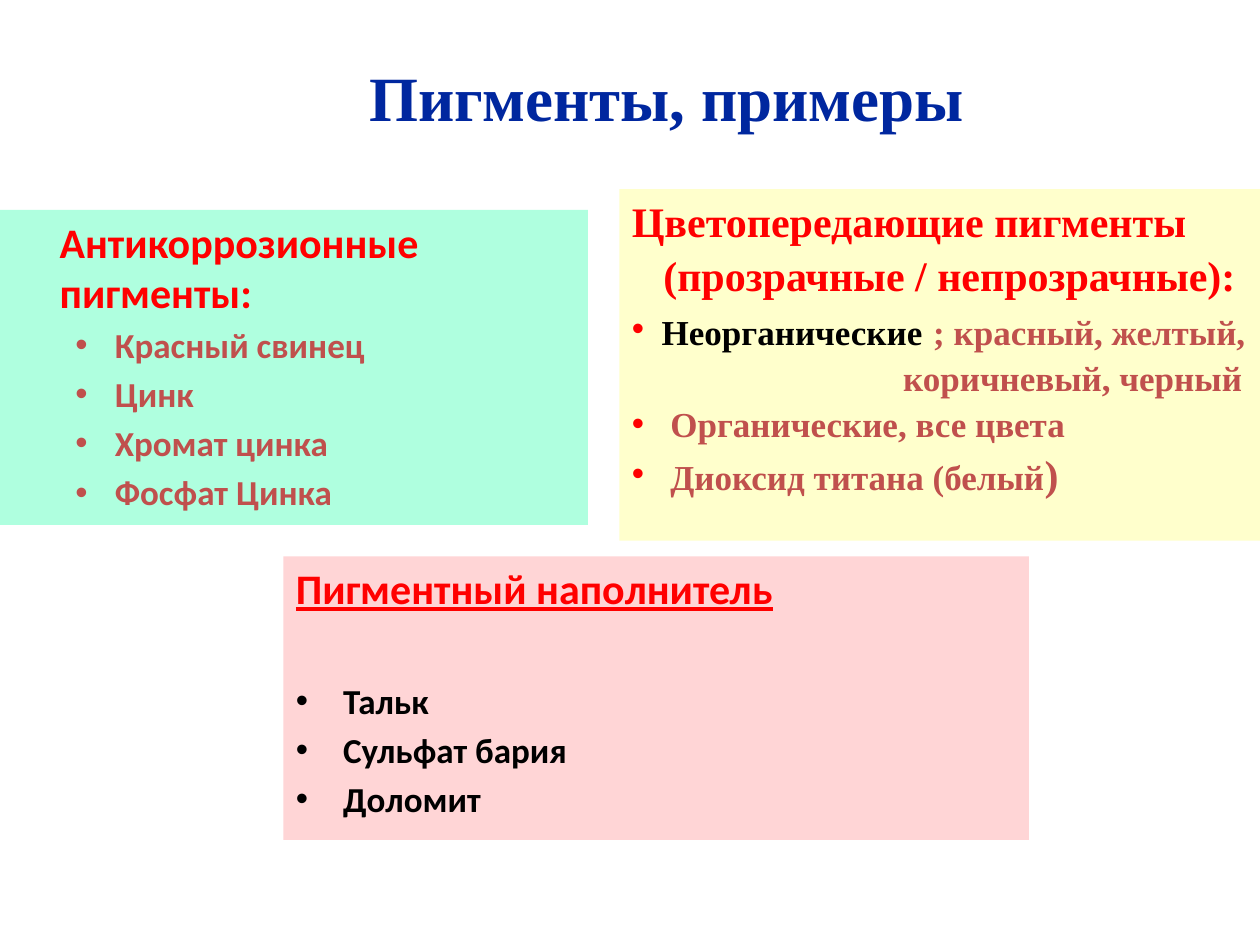
from lxml.etree import SubElement
from pptx import Presentation
from pptx.dml.color import RGBColor
from pptx.enum.shapes import MSO_SHAPE as Shape
from pptx.enum.text import MSO_ANCHOR as Anchor, PP_ALIGN as Align
from pptx.oxml.ns import qn
from pptx.util import Pt

RED = RGBColor(0xFF, 0x00, 0x00)
BRICK = RGBColor(0xC0, 0x50, 0x4D)
BLACK = RGBColor(0x00, 0x00, 0x00)
NAVY = RGBColor(0x00, 0x27, 0x9F)
MINT = RGBColor(0xAF, 0xFF, 0xDF)
ROSE = RGBColor(0xFF, 0xD5, 0xD6)
CREAM = RGBColor(0xFF, 0xFF, 0xCC)

SANS, SERIF = "Calibri", "Times New Roman"
HEAD, ITEM = 24, 20

TITLE = ("Пигменты, примеры", 36, NAVY)


def line(*runs, left=0, hang=0, before=4, dot=None, under=False):
    return dict(runs=runs, left=left, hang=hang, before=before,
                dot=dot, under=under)


def items(names, color, **place):
    return [line((name, ITEM, color), dot=color, **place) for name in names]


MINERALS = ["Красный свинец", "Цинк", "Хромат цинка", "Фосфат Цинка"]
FILLERS = ["Тальк", "Сульфат бария", "Доломит"]

rust = [line(("Антикоррозионные пигменты:", HEAD, RED), left=27, before=5)]
rust += items(MINERALS, BRICK, left=58.5, hang=22.5)

filler = [line(("Пигментный наполнитель", HEAD, RED), before=5, under=True)]
filler += items(FILLERS, BLACK, left=27, hang=27)
filler[1]["before"] = 38

tint = [
    line(("Цветопередающие пигменты", HEAD, RED), before=2),
    line(("(прозрачные / непрозрачные):", HEAD, RED), left=18, before=2),
    line(("Неорганические", ITEM, BLACK), (" ", HEAD, BLACK),
         ("; красный, желтый,", ITEM, BRICK),
         left=17, hang=17, before=2, dot=RED),
    line(("коричневый, черный", ITEM, BRICK), left=155, before=2),
    line(("Органические, все цвета", ITEM, BRICK),
         left=22, hang=22, before=2, dot=RED),
    line(("Диоксид титана (белый", ITEM, BRICK), (")", HEAD, BRICK),
         left=22, hang=22, before=2, dot=RED),
]

# left, top, width, height, fill, font, lines
PANELS = [
    (0, 120, 336, 180, MINT, SANS, rust),
    (162, 318, 426, 162, ROSE, SANS, filler),
    (354, 108, 366, 201, CREAM, SERIF, tint),
]


def add_run(para, text, size, color, face, under=False):
    run = para.add_run()
    run.text = text
    font = run.font
    font.name, font.size, font.bold = face, Pt(size), True
    font.underline = under
    font.color.rgb = color


def set_bullet(para, left, hang, color):
    props = para._p.get_or_add_pPr()
    props.set("marL", str(Pt(left)))
    props.set("indent", str(-Pt(hang)))
    if color is None:
        SubElement(props, qn("a:buNone"))
        return
    tone = SubElement(props, qn("a:buClr"))
    SubElement(tone, qn("a:srgbClr"), val=str(color))
    SubElement(props, qn("a:buFont"), typeface="Arial")
    SubElement(props, qn("a:buChar"), char="•")


def add_panel(slide, left, top, width, height, fill, face, lines):
    box = slide.shapes.add_shape(
        Shape.RECTANGLE, Pt(left), Pt(top), Pt(width), Pt(height))
    box.shadow.inherit = False
    box.fill.solid()
    box.fill.fore_color.rgb = fill
    box.line.fill.background()
    frame = box.text_frame
    frame.word_wrap = True
    frame.vertical_anchor = Anchor.TOP
    for i, row in enumerate(lines):
        para = frame.add_paragraph() if i else frame.paragraphs[0]
        para.alignment = Align.LEFT
        para.space_before = Pt(row["before"])
        set_bullet(para, row["left"], row["hang"], row["dot"])
        for text, size, color in row["runs"]:
            add_run(para, text, size, color, face, row["under"])


def main():
    deck = Presentation()
    deck.slide_width, deck.slide_height = Pt(720), Pt(540)
    slide = deck.slides.add_slide(deck.slide_layouts[6])
    for panel in PANELS:
        add_panel(slide, *panel)
    title = slide.shapes.add_textbox(Pt(204), Pt(30), Pt(354), Pt(50.5))
    title.text_frame.word_wrap = False
    add_run(title.text_frame.paragraphs[0], *TITLE, SERIF)
    deck.save("out.pptx")


if __name__ == "__main__":
    main()
